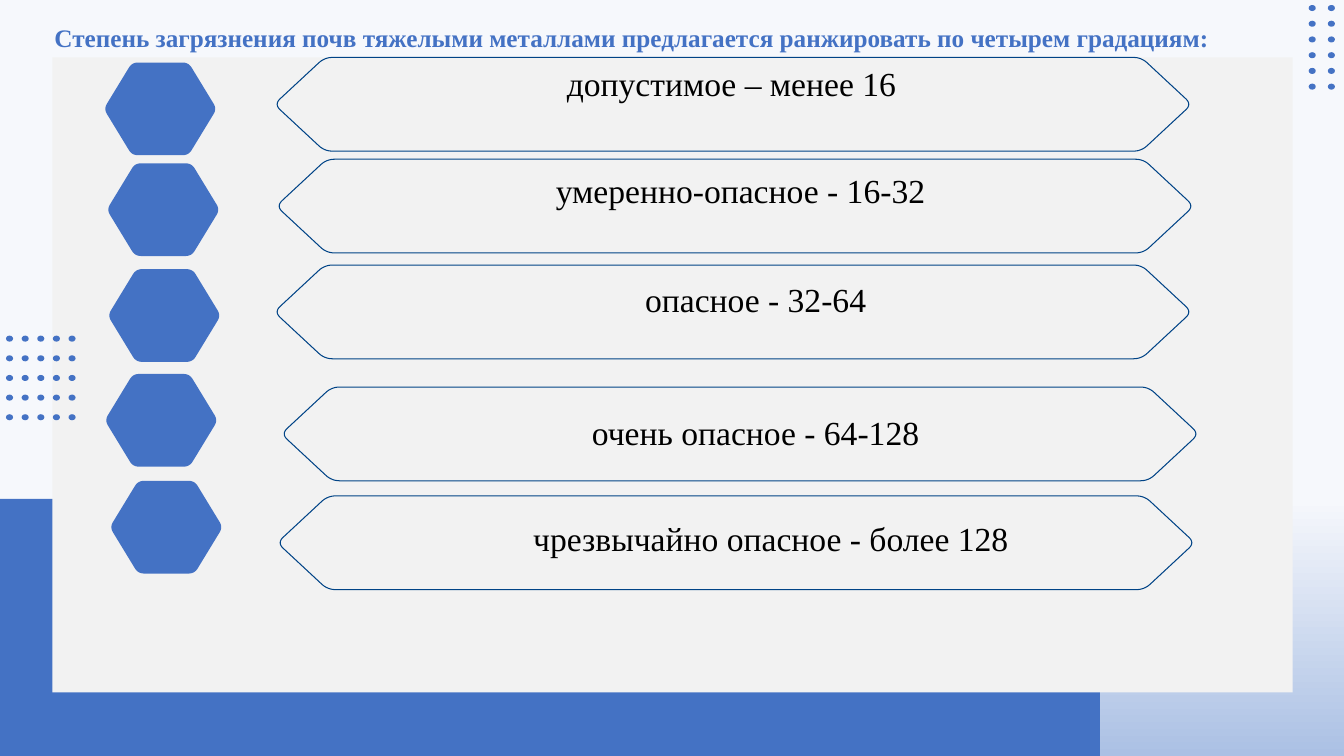
from math import dist

from pptx import Presentation
from pptx.dml.color import RGBColor
from pptx.enum.shapes import MSO_SHAPE as Preset
from pptx.enum.text import MSO_ANCHOR as Anchor, MSO_AUTO_SIZE as AutoSize, PP_ALIGN as Align
from pptx.util import Inches, Pt

TITLE = "Степень загрязнения почв тяжелыми металлами предлагается ранжировать по четырем градациям:"
# text, hexagon corner, band corner, label corner, label width, centred
GRADES = [
    ("допустимое – менее 16", (1.04, 0.62), (2.75, 0.57), (3.92, 0.58), 6.67, True),
    ("умеренно-опасное - 16-32", (1.07, 1.62), (2.77, 1.58), (4.01, 1.64), 6.67, True),
    ("опасное - 32-64", (1.08, 2.67), (2.75, 2.63), (4.16, 2.72), 6.67, True),
    ("очень опасное - 64-128", (1.05, 3.71), (2.82, 3.84), (4.16, 4.04), 6.67, True),
    ("чрезвычайно опасное - более 128", (1.1, 4.77), (2.78, 4.92), (5.19, 5.09), 4.97, False),
]
# left, top, columns, rows, column step, row step
DOT_GRIDS = [(12.98, 0.05, 2, 6, 0.19, 0.156), (0.06, 3.33, 5, 5, 0.155, 0.195)]
DOT_SIZE = (0.07, 0.06)
# width, height, tip overshoot, shoulder, corner cut
HEXAGON = (1.1, 0.92, 0.01, 0.27, 0.06)
BAND = (9.04, 0.93, 0.03, 0.47, 0.08)
CURVE_STEPS = 8

FONT = "Times New Roman"
BLUE = RGBColor(0x44, 0x72, 0xC4)
NAVY = RGBColor(0x00, 0x43, 0x86)
PANEL = RGBColor(0xF2, 0xF2, 0xF2)
BLACK = RGBColor(0, 0, 0)
SKY = [(0.66, RGBColor(0xF6, 0xF8, 0xFC)), (1.0, RGBColor(0xAB, 0xC0, 0xE4))]


def add_filled(shapes, preset, left, top, width, height, color):
    shape = shapes.add_shape(preset, Inches(left), Inches(top), Inches(width), Inches(height))
    shape.shadow.inherit = False
    shape.fill.solid()
    shape.fill.fore_color.rgb = color
    shape.line.fill.background()


def rounded_outline(corners, cut):
    """Replace each corner by a quadratic curve that starts and ends `cut` away from it."""
    points = []
    for index, corner in enumerate(corners):
        ends = []
        for other in (corners[index - 1], corners[(index + 1) % len(corners)]):
            share = cut / dist(corner, other)
            ends.append([c + (o - c) * share for c, o in zip(corner, other)])
        for step in range(CURVE_STEPS + 1):
            t = step / CURVE_STEPS
            points.append(tuple(
                Inches((1 - t) ** 2 * a + 2 * t * (1 - t) * c + t ** 2 * b)
                for a, c, b in zip(ends[0], corner, ends[1])))
    return points


def add_hexagon(slide, position, form):
    left, top = position
    width, height, overshoot, shoulder, cut = form
    corners = [(shoulder, 0), (width - shoulder, 0), (width + overshoot, height / 2),
               (width - shoulder, height), (shoulder, height), (-overshoot, height / 2)]
    points = rounded_outline([(left + x, top + y) for x, y in corners], cut)
    builder = slide.shapes.build_freeform(*points[0])
    builder.add_line_segments(points[1:], close=True)
    shape = builder.convert_to_shape()
    shape.shadow.inherit = False
    return shape


def write(paragraph, text, size, color, bold=False):
    run = paragraph.add_run()
    run.text = text
    run.font.name = FONT
    run.font.size = Pt(size)
    run.font.bold = bold
    run.font.color.rgb = color


def add_title(slide):
    title = slide.shapes.title
    title.left, title.top = Inches(0.44), Inches(0.13)
    title.width, title.height = Inches(11.85), Inches(1.79)
    frame = title.text_frame
    frame.word_wrap = True
    frame.auto_size = AutoSize.NONE
    frame.vertical_anchor = Anchor.TOP
    paragraph = frame.paragraphs[0]
    paragraph.alignment = Align.JUSTIFY
    paragraph.line_spacing = 1.15
    paragraph.space_before = Pt(0)
    write(paragraph, TITLE, 18, BLUE, bold=True)
    title.element.getparent().append(title.element)  # bring in front of the panel


def add_label(slide, text, position, width, centred):
    left, top = position
    box = slide.shapes.add_textbox(Inches(left), Inches(top), Inches(width), Inches(0.5))
    frame = box.text_frame
    frame.word_wrap = centred
    frame.auto_size = AutoSize.SHAPE_TO_FIT_TEXT
    paragraph = frame.paragraphs[0]
    if centred:
        paragraph.alignment = Align.CENTER
        paragraph.space_before = paragraph.space_after = Pt(1.4)
    write(paragraph, text, 24, BLACK)


def main():
    presentation = Presentation()
    presentation.slide_width, presentation.slide_height = Inches(13.33), Inches(7.5)
    slide = presentation.slides.add_slide(presentation.slide_layouts[5])

    sky = slide.background.fill
    sky.gradient()
    sky.gradient_angle = 270
    for stop, (position, color) in zip(sky.gradient_stops, SKY):
        stop.position = position
        stop.color.rgb = color

    add_filled(slide.shapes, Preset.RECTANGLE, 0, 4.95, 10.91, 2.55, BLUE)
    add_filled(slide.shapes, Preset.RECTANGLE, 0.52, 0.57, 12.3, 6.3, PANEL)
    for left, top, columns, rows, column_step, row_step in DOT_GRIDS:
        group = slide.shapes.add_group_shape()
        for column in range(columns):
            for row in range(rows):
                add_filled(group.shapes, Preset.OVAL, left + column * column_step,
                           top + row * row_step, *DOT_SIZE, BLUE)

    add_title(slide)
    for text, hexagon_at, band_at, label_at, label_width, centred in GRADES:
        hexagon = add_hexagon(slide, hexagon_at, HEXAGON)
        hexagon.fill.solid()
        hexagon.fill.fore_color.rgb = BLUE
        hexagon.line.fill.background()
        band = add_hexagon(slide, band_at, BAND)
        band.fill.background()
        band.line.color.rgb = NAVY
        band.line.width = Pt(0.75)
        add_label(slide, text, label_at, label_width, centred)

    presentation.save("out.pptx")


if __name__ == "__main__":
    main()
